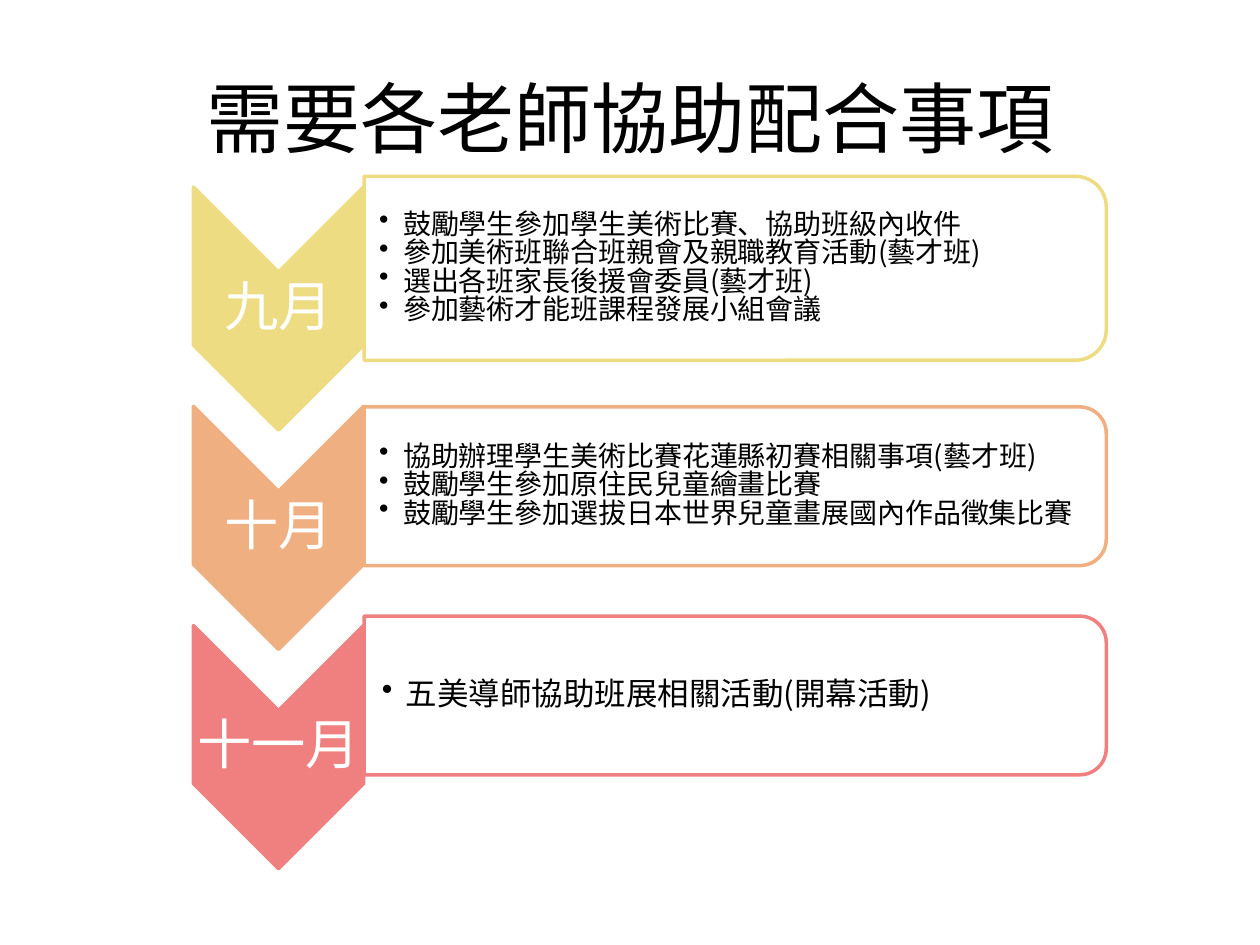
from dataclasses import dataclass

from lxml import etree
from pptx import Presentation
from pptx.dml.color import RGBColor
from pptx.enum.shapes import MSO_SHAPE
from pptx.enum.text import MSO_ANCHOR, PP_ALIGN
from pptx.oxml.ns import qn
from pptx.util import Inches, Pt

CHEVRON = MSO_SHAPE.CHEVRON
PANEL = MSO_SHAPE.ROUND_2_SAME_RECTANGLE
MIDDLE = MSO_ANCHOR.MIDDLE
CENTER = PP_ALIGN.CENTER
LEFT = PP_ALIGN.LEFT


@dataclass(frozen=True)
class Theme:
    black: str = "000000"
    white: str = "FFFFFF"
    yellow: str = "EEDC82"
    orange: str = "EFAF81"
    coral: str = "F08080"
    east_asian: str = "Noto Sans CJK SC"
    latin: str = "Calibri"
    title_size: int = 44
    month_size: int = 31
    list_size: int = 16
    large_list_size: int = 18
    outline: int = 2


@dataclass(frozen=True)
class Month:
    name: str
    color: str
    panel_middle: float
    panel_height: float
    size: int
    inset: float
    tasks: tuple[str, ...]


THEME = Theme()
CHEVRON_X, FIRST_CHEVRON_Y, CHEVRON_PITCH = 2.21, 2.45, 1.74
CHEVRON_LENGTH, CHEVRON_WIDTH = 1.93, 1.35
PANEL_LEFT, PANEL_WIDTH = 2.89, 5.89
HANGING = 0.19

MONTHS = (
    Month("九月", THEME.yellow, 2.13, 1.46, THEME.list_size, 0.12, (
        "鼓勵學生參加學生美術比賽、協助班級內收件",
        "參加美術班聯合班親會及親職教育活動(藝才班)",
        "選出各班家長後援會委員(藝才班)",
        "參加藝術才能班課程發展小組會議",
    )),
    Month("十月", THEME.orange, 3.86, 1.26, THEME.list_size, 0.12, (
        "協助辦理學生美術比賽花蓮縣初賽相關事項(藝才班)",
        "鼓勵學生參加原住民兒童繪畫比賽",
        "鼓勵學生參加選拔日本世界兒童畫展國內作品徵集比賽",
    )),
    Month("十一月", THEME.coral, 5.52, 1.26, THEME.large_list_size, 0.14, (
        "五美導師協助班展相關活動(開幕活動)",
    )),
)


def style_paragraph(para, size: int, color: str, latin: str, align) -> None:
    para.alignment = align
    para.font.size = Pt(size)
    para.font.color.rgb = RGBColor.from_string(color)
    para.font.name = latin
    defaults = para._p.pPr.find(qn("a:defRPr"))
    etree.SubElement(defaults, qn("a:ea"), typeface=THEME.east_asian)


def add_bullet(para) -> None:
    properties = para._p.get_or_add_pPr()
    properties.set("marL", str(Inches(HANGING)))
    properties.set("indent", str(-Inches(HANGING)))
    etree.SubElement(properties, qn("a:buChar"), char="•")


def add_rotated_shape(slide, kind, middle_x: float, middle_y: float,
                      width: float, height: float, fill: str, line: str):
    shape = slide.shapes.add_shape(
        kind, Inches(middle_x - width / 2), Inches(middle_y - height / 2),
        Inches(width), Inches(height))
    shape.rotation = 90
    shape.shadow.inherit = False
    shape.fill.solid()
    shape.fill.fore_color.rgb = RGBColor.from_string(fill)
    shape.line.color.rgb = RGBColor.from_string(line)
    shape.line.width = Pt(THEME.outline)
    return shape


def add_text_frame(slide, left: float, middle_y: float, width: float,
                   height: float, inset_left: float, inset: float):
    box = slide.shapes.add_textbox(
        Inches(left), Inches(middle_y - height / 2), Inches(width), Inches(height))
    frame = box.text_frame
    frame.word_wrap = True
    frame.vertical_anchor = MIDDLE
    frame.margin_left = Inches(inset_left)
    frame.margin_right = frame.margin_top = frame.margin_bottom = Inches(inset)
    return frame


def add_month(slide, month: Month, chevron_y: float) -> None:
    add_rotated_shape(slide, CHEVRON, CHEVRON_X, chevron_y,
                      CHEVRON_LENGTH, CHEVRON_WIDTH, month.color, month.color)
    frame = add_text_frame(slide, CHEVRON_X - CHEVRON_WIDTH / 2, chevron_y,
                           CHEVRON_WIDTH, 0.58, 0.02, 0.02)
    para = frame.paragraphs[0]
    para.text = month.name
    para.line_spacing = 0.9
    style_paragraph(para, THEME.month_size, THEME.white, THEME.latin, CENTER)

    panel = add_rotated_shape(
        slide, PANEL, PANEL_LEFT + PANEL_WIDTH / 2, month.panel_middle,
        month.panel_height, PANEL_WIDTH, THEME.white, month.color)
    fill_color = panel._element.spPr.find(qn("a:solidFill"))[0]
    etree.SubElement(fill_color, qn("a:alpha"), val="90000")

    frame = add_text_frame(slide, PANEL_LEFT, month.panel_middle, PANEL_WIDTH - 0.06,
                           month.panel_height - 0.13, month.inset, 0.01)
    for index, task in enumerate(month.tasks):
        para = frame.add_paragraph() if index else frame.paragraphs[0]
        para.text = task
        para.line_spacing = 0.85
        add_bullet(para)
        style_paragraph(para, month.size, THEME.black, THEME.east_asian, LEFT)


def main() -> None:
    deck = Presentation()
    deck.slide_width, deck.slide_height = Inches(10), Inches(7.5)
    page = deck.slides.add_slide(deck.slide_layouts[5])

    title = page.shapes.title
    title.left, title.top = Inches(0.5), Inches(0.3)
    title.width, title.height = Inches(9), Inches(1.25)
    title.text_frame.vertical_anchor = MIDDLE
    para = title.text_frame.paragraphs[0]
    para.text = "需要各老師協助配合事項"
    style_paragraph(para, THEME.title_size, THEME.black, THEME.east_asian, CENTER)

    for index, month in enumerate(MONTHS):
        add_month(page, month, FIRST_CHEVRON_Y + index * CHEVRON_PITCH)

    deck.save("out.pptx")


if __name__ == "__main__":
    main()
